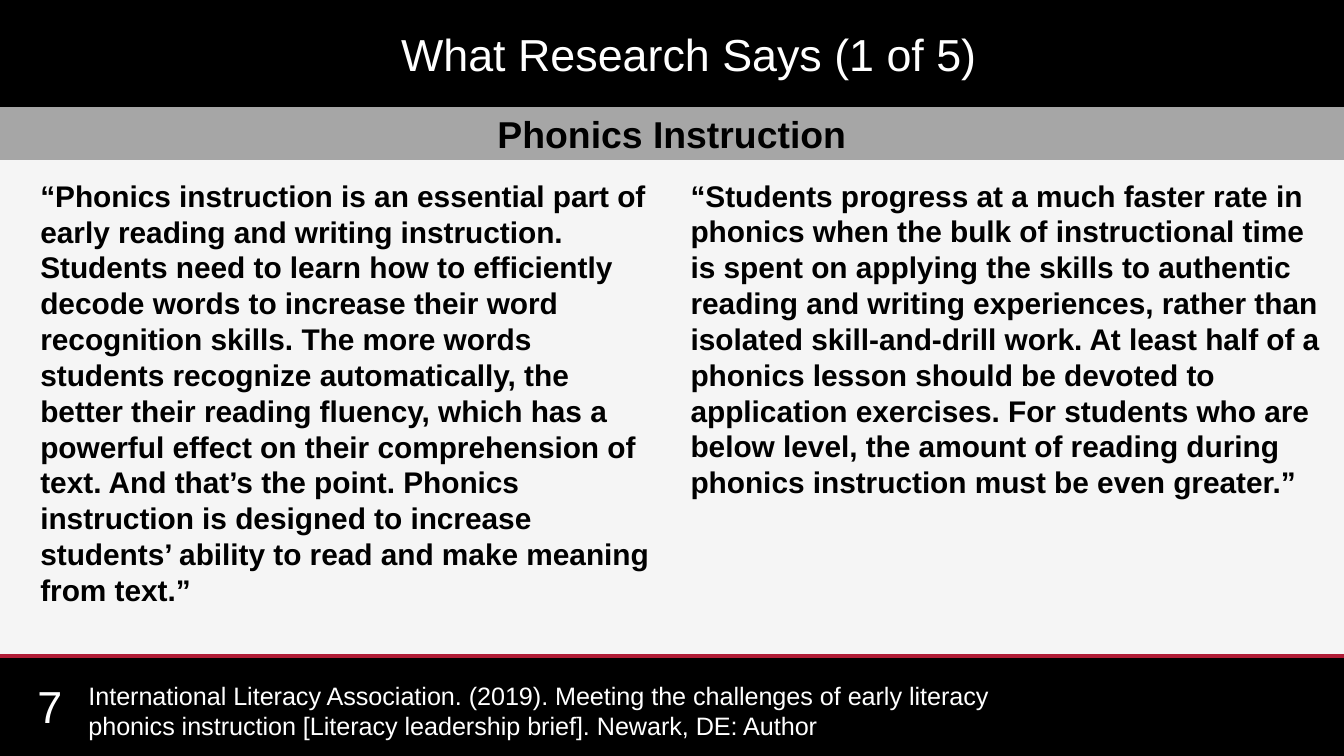
from pptx import Presentation
from pptx.dml.color import RGBColor
from pptx.enum.shapes import MSO_CONNECTOR, MSO_SHAPE
from pptx.enum.text import MSO_ANCHOR, MSO_AUTO_SIZE, PP_ALIGN
from pptx.oxml.ns import qn
from pptx.util import Inches, Pt
from lxml.etree import SubElement

# Content
TITLE = "What Research Says (1 of 5)"
TOPIC = "Phonics Instruction"
QUOTES = [
    "“Phonics instruction is an essential part of early reading and writing "
    "instruction. Students need to learn how to efficiently decode words to "
    "increase their word recognition skills. The more words students recognize "
    "automatically, the better their reading fluency, which has a powerful effect "
    "on their comprehension of text. And that’s the point. Phonics instruction is "
    "designed to increase students’ ability to read and make meaning from text.”",
    "“Students progress at a much faster rate in phonics when the bulk of "
    "instructional time is spent on applying the skills to authentic reading and "
    "writing experiences, rather than isolated skill-and-drill work. At least half "
    "of a phonics lesson should be devoted to application exercises. For students "
    "who are below level, the amount of reading during phonics instruction must be "
    "even greater.”",
]
CITATION = (
    "International Literacy Association. (2019). Meeting the challenges of early "
    "literacy phonics instruction [Literacy leadership brief]. Newark, DE: Author"
)
PAGE_NUMBER = "7"

THEME = {
    "font": "Arial",
    "black": RGBColor(0x00, 0x00, 0x00),
    "white": RGBColor(0xFF, 0xFF, 0xFF),
    "panel": RGBColor(0xF5, 0xF5, 0xF5),
    "banner": RGBColor(0xA6, 0xA6, 0xA6),
    "rule": RGBColor(0xB0, 0x1C, 0x36),
    "title": 24, "topic": 20, "quote": 16, "citation": 13.5,
}

# A 16:9 page
WIDTH = 10
HEIGHT = WIDTH * 9 / 16
FOOTER_TOP = 4.88


def place(shape, left, top, width, height):
    shape.left, shape.top = Inches(left), Inches(top)
    shape.width, shape.height = Inches(width), Inches(height)


def write(shape, text, size, color="black", bold=False, align=PP_ALIGN.LEFT,
          anchor=MSO_ANCHOR.TOP, margins=(0.1, 0.05)):
    frame = shape.text_frame
    frame.word_wrap = True
    frame.auto_size = MSO_AUTO_SIZE.NONE
    frame.vertical_anchor = anchor
    frame.margin_left = frame.margin_right = Inches(margins[0])
    frame.margin_top = frame.margin_bottom = Inches(margins[1])
    para = frame.paragraphs[0]
    para.alignment = align
    para.space_before = Pt(0)
    span = para.add_run()
    span.text = text
    span.font.name = THEME["font"]
    span.font.size = Pt(THEME[size])
    span.font.bold = bold
    span.font.color.rgb = THEME[color]
    return para


def add_band(slide, color, left, top, width, height):
    band = slide.shapes.add_shape(
        MSO_SHAPE.RECTANGLE, Inches(left), Inches(top), Inches(width), Inches(height))
    band.shadow.inherit = False
    band.fill.solid()
    band.fill.fore_color.rgb = THEME[color]
    band.line.fill.background()
    return band


def add_text(slide, box, text, size, **style):
    shape = slide.shapes.add_textbox(*[Inches(value) for value in box])
    write(shape, text, size, **style)


def main():
    deck = Presentation()
    deck.slide_width, deck.slide_height = Inches(WIDTH), Inches(HEIGHT)
    page = deck.slides.add_slide(deck.slide_layouts[1])
    title, body = page.placeholders
    heading = {"align": PP_ALIGN.CENTER, "anchor": MSO_ANCHOR.MIDDLE,
               "margins": (0.5, 0)}

    # Panel and footer, with the red rule between them
    add_band(page, "panel", 0, 0.84, WIDTH, FOOTER_TOP - 0.84)
    add_band(page, "black", 0, FOOTER_TOP, WIDTH, HEIGHT - FOOTER_TOP)
    rule = page.shapes.add_connector(
        MSO_CONNECTOR.STRAIGHT, 0, Inches(FOOTER_TOP), Inches(WIDTH), Inches(FOOTER_TOP))
    rule.line.color.rgb = THEME["rule"]
    rule.line.width = Pt(2)
    SubElement(rule.element.spPr, qn("a:effectLst"))

    # Placeholders go in front of the panel
    for holder in (body, title):
        page.shapes.element.append(holder.element)

    # Title bar and topic banner
    place(title, 0, 0, 10.25, 0.8)
    title.fill.solid()
    title.fill.fore_color.rgb = THEME["black"]
    write(title, TITLE, "title", color="white", **heading)
    banner = add_band(page, "banner", 0, 0.8, WIDTH, 0.39)
    write(banner, TOPIC, "topic", bold=True, **heading)

    # Two quotes side by side
    place(body, 0.2, 1.27, 4.76, 3.16)
    para = write(body, QUOTES[0], "quote", bold=True)
    properties = para._p.get_or_add_pPr()
    properties.set("marL", "0")
    properties.set("indent", "0")
    SubElement(properties, qn("a:buNone"))
    add_text(page, (5.04, 1.27, 5, 2.52), QUOTES[1], "quote", bold=True)

    # Footer text
    add_text(page, (0.18, 5.1, 2.33, 0.3), PAGE_NUMBER, "title", color="white",
             anchor=MSO_ANCHOR.MIDDLE)
    add_text(page, (0.56, 5.01, 7.54, 0.78), CITATION, "citation", color="white")

    deck.save("out.pptx")


if __name__ == "__main__":
    main()
